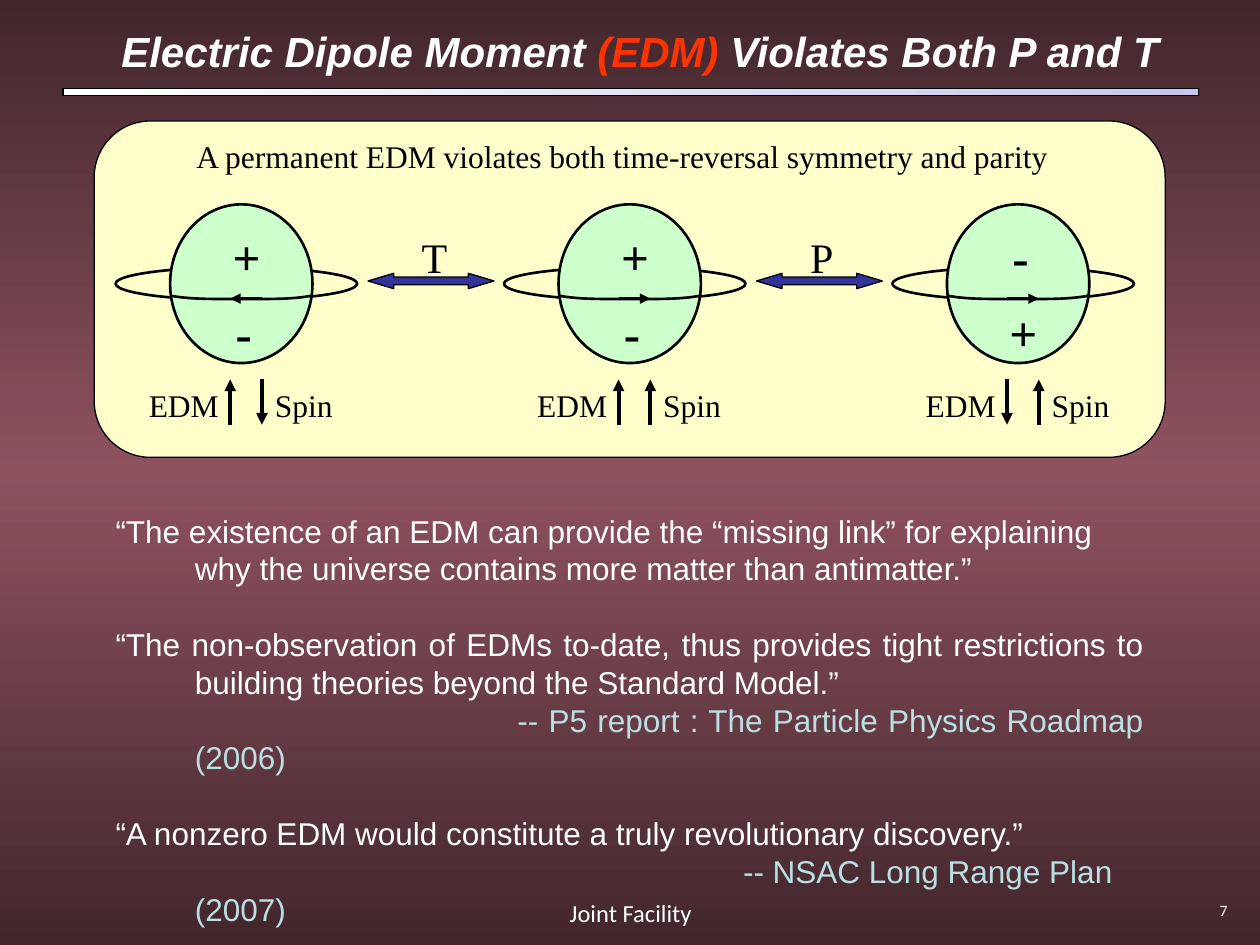
from copy import deepcopy

from lxml import etree
from pptx import Presentation
from pptx.dml.color import RGBColor
from pptx.enum.shapes import MSO_CONNECTOR, MSO_SHAPE
from pptx.enum.text import MSO_ANCHOR, MSO_AUTO_SIZE, PP_ALIGN
from pptx.oxml.ns import qn
from pptx.util import Cm, Pt

RECT, ROUNDED = MSO_SHAPE.RECTANGLE, MSO_SHAPE.ROUNDED_RECTANGLE
OVAL, DOUBLE_ARROW = MSO_SHAPE.OVAL, MSO_SHAPE.LEFT_RIGHT_ARROW
STRAIGHT = MSO_CONNECTOR.STRAIGHT
LEFT, CENTER, RIGHT, JUSTIFY = (
    PP_ALIGN.LEFT, PP_ALIGN.CENTER, PP_ALIGN.RIGHT, PP_ALIGN.JUSTIFY)

COLORS = {
    "edge": "42262C", "glow": "8E525F", "white": "FFFFFF", "black": "000000",
    "lilac": "C7C8F1", "panel": "FFFFCC", "sphere": "CCFFCC",
    "arrow": "333399", "accent": "FF3300", "source": "BBE0E3",
}
SANS, SERIF, FOOTER = "Arial", "Times New Roman", "Calibri"

STATE_LEFT, STATE_STEP = 2.33, 7.83
EDM_X, SPIN_X = 2.31, 2.95  # arrow columns within one state
CHARGES = {"+": (2.11, 1.07), "-": (2.17, 0.84)}  # offset and width
LINE_PITCH = Pt(21.6)
HANG = 1.6

# upper charge, lower charge, rotation to the right, EDM up, spin up
STATES = [
    ("+", "-", False, True, False),
    ("+", "-", True, True, True),
    ("-", "+", True, False, True),
]

# text, colour, alignment, first-line indent, starts a new quote
QUOTES = [
    ("“The existence of an EDM can provide the “missing link” for explaining "
     "why the universe contains more matter than antimatter.”",
     "white", LEFT, -HANG, False),
    ("“The non-observation of EDMs to-date, thus provides tight restrictions "
     "to building theories beyond the Standard Model.”",
     "white", JUSTIFY, -HANG, True),
    ("-- P5 report : The Particle Physics Roadmap (2006)",
     "source", JUSTIFY, 6.5, False),
    ("“A nonzero EDM would constitute a truly revolutionary discovery.”",
     "white", LEFT, -HANG, True),
    ("-- NSAC Long Range Plan (2007)", "source", LEFT, 11.05, False),
]


def rgb(name):
    return RGBColor.from_string(COLORS[name])


def set_font(font, name, size, color, bold=False):
    font.name, font.size, font.bold = name, Pt(size), bold
    font.color.rgb = rgb(color)


def set_gradient(fill, owner, names, angle):
    """Fill with evenly spaced colour stops; owner holds the fill's XML."""
    fill.gradient()
    fill.gradient_angle = angle
    stop_list = owner.find(".//" + qn("a:gsLst"))
    for extra in range(len(names) - len(stop_list)):
        stop_list.append(deepcopy(stop_list[0]))
    for index, (stop, name) in enumerate(zip(fill.gradient_stops, names)):
        stop.color.rgb = rgb(name)
        stop.position = index / (len(names) - 1)


def outline(shape, width):
    shape.shadow.inherit = False
    shape.line.color.rgb = rgb("black")
    shape.line.width = Pt(width)


def add_figure(slide, kind, box, fill=None, width=0.75):
    shape = slide.shapes.add_shape(kind, *map(Cm, box))
    outline(shape, width)
    if fill:
        shape.fill.solid()
        shape.fill.fore_color.rgb = rgb(fill)
    else:
        shape.fill.background()
    return shape


def add_label(slide, text, box, size, font=SERIF, color="black",
              align=LEFT, bold=False):
    label = slide.shapes.add_textbox(*map(Cm, box))
    label.text_frame.word_wrap = False
    paragraph = label.text_frame.paragraphs[0]
    paragraph.text, paragraph.alignment = text, align
    set_font(paragraph.font, font, size, color, bold)


def add_arrow(slide, start, end, width):
    arrow = slide.shapes.add_connector(STRAIGHT, *map(Cm, start + end))
    arrow.line.color.rgb = rgb("black")
    arrow.line.width = Pt(width)
    etree.SubElement(arrow.line._get_or_add_ln(), qn("a:tailEnd"),
                     type="triangle")
    etree.SubElement(arrow.element.spPr, qn("a:effectLst"))


def add_orbit_front(slide, left, top, width, depth, steps=24):
    """Draw the part of the orbit that passes in front of the sphere."""
    points = [
        (Cm(left + width * i / steps),
         Cm(top + depth * (1 - (2 * i / steps - 1) ** 4)))
        for i in range(steps + 1)
    ]
    builder = slide.shapes.build_freeform(*points[0])
    builder.add_line_segments(points[1:], close=False)
    arc = builder.convert_to_shape()
    arc.fill.background()
    outline(arc, 1.5)


def add_vertical_arrow(slide, x, up):
    top, bottom = (x, 7.65), (x, 8.56)
    add_arrow(slide, *((bottom, top) if up else (top, bottom)), 2.25)


def add_state(slide, left, upper, lower, rightward, edm_up, spin_up):
    add_figure(slide, OVAL, (left, 5.39, 4.87, 0.66), width=1.5)
    add_figure(slide, OVAL, (left + 1.1, 4.12, 2.87, 3.2), "sphere", 1.5)
    add_orbit_front(slide, left + 1.1, 5.96, 2.87, 0.07)
    for charge, top in ((upper, 4.45), (lower, 5.97)):
        offset, width = CHARGES[charge]
        add_label(slide, charge, (left + offset, top, width, 1.45), 28,
                  bold=True)
    ends = [(left + EDM_X, 6.02), (left + SPIN_X, 6.02)]
    add_arrow(slide, *(ends if rightward else ends[::-1]), 1.5)
    add_vertical_arrow(slide, left + EDM_X, edm_up)
    add_vertical_arrow(slide, left + SPIN_X, spin_up)
    add_label(slide, "EDM", (left + 0.42, 7.65, 1.93, 1.02), 18)
    add_label(slide, "Spin", (left + 2.96, 7.65, 1.68, 1.02), 18)


def add_symmetry(slide, left, letter):
    arrow = add_figure(slide, DOUBLE_ARROW, (left, 5.51, 2.54, 0.31), "arrow")
    arrow.adjustments[0], arrow.adjustments[1] = 0.5, 1.67
    add_label(slide, letter, (left + 0.83, 4.55, 1.0, 1.27), 24)


def add_title(slide):
    title = slide.shapes.title
    title.left, title.top, title.width, title.height = map(
        Cm, (2.11, 0.08, 21.59, 1.9))
    title.text_frame.vertical_anchor = MSO_ANCHOR.MIDDLE
    paragraph = title.text_frame.paragraphs[0]
    paragraph.alignment = CENTER
    set_font(paragraph.font, SANS, 24, "white", bold=True)
    paragraph.font.italic = True
    for text in ("Electric Dipole Moment ", "(EDM)",
                 " Violates Both P and T"):
        run = paragraph.add_run()
        run.text = text
        if text == "(EDM)":
            run.font.color.rgb = rgb("accent")


def add_quotes(slide):
    box = slide.shapes.add_textbox(Cm(2.08), Cm(10.19), Cm(21.23), Cm(7.11))
    frame = box.text_frame
    frame.word_wrap = True
    frame.auto_size = MSO_AUTO_SIZE.SHAPE_TO_FIT_TEXT
    for index, (text, color, align, indent, new_quote) in enumerate(QUOTES):
        paragraph = frame.add_paragraph() if index else frame.paragraphs[0]
        paragraph.text, paragraph.alignment = text, align
        properties = paragraph._p.get_or_add_pPr()
        properties.set("marL", str(Cm(HANG)))
        properties.set("indent", str(Cm(indent)))
        paragraph.line_spacing = LINE_PITCH
        if new_quote:
            paragraph.space_before = LINE_PITCH
        set_font(paragraph.font, SANS, 18, color)


def main():
    deck = Presentation()
    deck.slide_width, deck.slide_height = Cm(25.4), Cm(19.05)
    slide = deck.slides.add_slide(deck.slide_layouts[5])
    set_gradient(slide.background.fill, slide.element,
                 ("edge", "glow", "edge"), 270)
    rule = add_figure(slide, RECT, (1.27, 1.78, 22.89, 0.15))
    set_gradient(rule.fill, rule.element, ("white", "lilac"), 0)
    add_label(slide, "7", (23.93, 18.03, 1.07, 1.02), 9, FOOTER, "white",
              RIGHT)
    add_label(slide, "Joint Facility", (8.69, 17.98, 8.05, 1.07), 14, FOOTER,
              "white", CENTER)
    add_title(slide)

    panel = add_figure(slide, ROUNDED, (1.9, 2.44, 21.59, 6.78), "panel")
    panel.adjustments[0] = 0.167
    add_label(slide, "A permanent EDM violates both time-reversal symmetry "
              "and parity", (3.71, 2.64, 17.88, 1.02), 18)
    for index, state in enumerate(STATES):
        add_state(slide, STATE_LEFT + index * STATE_STEP, *state)
    for index, letter in enumerate("TP"):
        add_symmetry(slide, 7.42 + index * STATE_STEP, letter)
    add_quotes(slide)
    deck.save("out.pptx")


if __name__ == "__main__":
    main()
